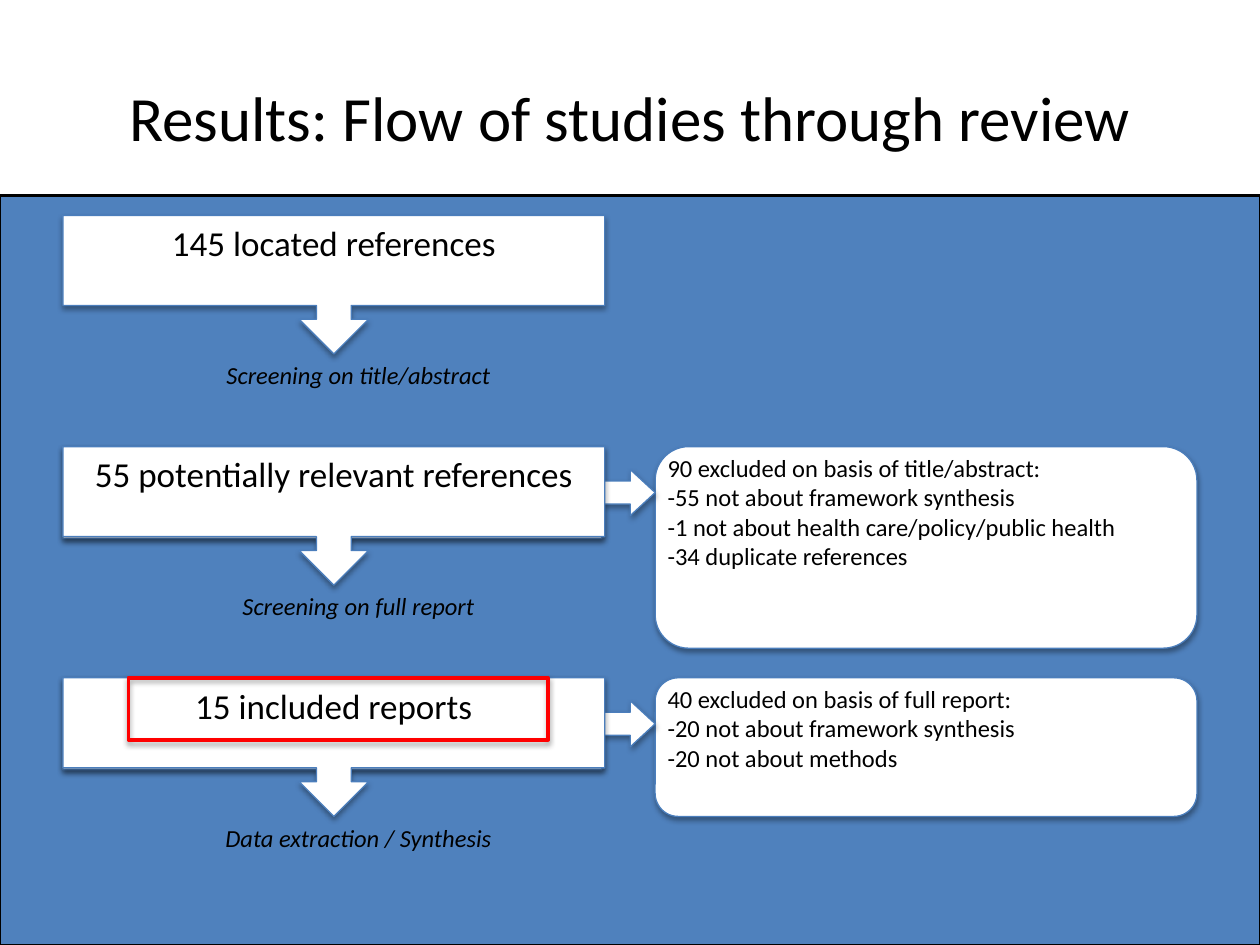
from lxml import etree
from pptx import Presentation
from pptx.dml.color import RGBColor
from pptx.enum.shapes import MSO_CONNECTOR, MSO_SHAPE
from pptx.enum.text import MSO_ANCHOR, PP_ALIGN
from pptx.oxml.ns import qn
from pptx.util import Inches, Pt

BLACK = RGBColor(0x00, 0x00, 0x00)
WHITE = RGBColor(0xFF, 0xFF, 0xFF)
BLUE = RGBColor(0x4F, 0x81, 0xBD)
OUTLINE_BLUE = RGBColor(0x4B, 0x7E, 0xBC)
RED = RGBColor(0xFF, 0x00, 0x00)
CENTER, LEFT = PP_ALIGN.CENTER, PP_ALIGN.LEFT
RECTANGLE = MSO_SHAPE.RECTANGLE
ROUNDED = MSO_SHAPE.ROUNDED_RECTANGLE
DOWN_CALLOUT = MSO_SHAPE.DOWN_ARROW_CALLOUT
RIGHT_CALLOUT = MSO_SHAPE.RIGHT_ARROW_CALLOUT
FONT = "Calibri"

presentation = Presentation()
presentation.slide_width = Inches(10)
presentation.slide_height = Inches(7.5)
slide = presentation.slides.add_slide(presentation.slide_layouts[5])


def add_box(kind, left, top, width, height, fill=WHITE, line=OUTLINE_BLUE,
            line_width=0.75, shadow=True):
    """Add a preset shape; fill=None leaves it hollow."""
    shape = slide.shapes.add_shape(
        kind, Inches(left), Inches(top), Inches(width), Inches(height))
    if fill is None:
        shape.fill.background()
    else:
        shape.fill.solid()
        shape.fill.fore_color.rgb = fill
    shape.line.color.rgb = line
    shape.line.width = Pt(line_width)
    shape.shadow.inherit = False
    if shadow:
        effects = shape._element.spPr.find(qn("a:effectLst"))
        outer = etree.SubElement(
            effects, qn("a:outerShdw"), blurRad=str(Pt(3.1)),
            dist=str(Pt(1.8)), dir="5400000", rotWithShape="0")
        color = etree.SubElement(outer, qn("a:srgbClr"), val=str(BLACK))
        etree.SubElement(color, qn("a:alpha"), val="35000")
    return shape


def add_text(lines, left, top, width, height, size=14, italic=False,
             alignment=CENTER):
    text_box = slide.shapes.add_textbox(
        Inches(left), Inches(top), Inches(width), Inches(height))
    frame = text_box.text_frame
    frame.word_wrap = True
    frame.text = "\n".join(lines)
    for paragraph in frame.paragraphs:
        paragraph.alignment = alignment
        paragraph.font.name = FONT
        paragraph.font.size = Pt(size)
        paragraph.font.italic = italic
        paragraph.font.color.rgb = BLACK


# Blue body with a rule under the title
add_box(RECTANGLE, 0, 1.55, 10, 5.95, fill=BLUE, line=BLACK, shadow=False)
rule = slide.shapes.add_connector(
    MSO_CONNECTOR.STRAIGHT, Inches(0), Inches(1.55), Inches(10), Inches(1.55))
rule.line.color.rgb = BLACK
rule.line.width = Pt(2)
etree.SubElement(rule._element.spPr, qn("a:effectLst"))

title = slide.shapes.title
title.left, title.top = Inches(0.5), Inches(0.3)
title.width, title.height = Inches(9), Inches(1.25)
title.text_frame.text = "Results: Flow of studies through review"
title.text_frame.vertical_anchor = MSO_ANCHOR.MIDDLE
title_paragraph = title.text_frame.paragraphs[0]
title_paragraph.alignment = CENTER
title_paragraph.font.name = FONT
title_paragraph.font.size = Pt(36)
title_paragraph.font.color.rgb = BLACK

# Each stage: references kept, next step, exclusions and their box height
STAGES = [
    ("145 located references", "Screening on title/abstract", [], 0),
    ("55 potentially relevant references", "Screening on full report",
     ["90 excluded on basis of title/abstract:",
      "-55 not about framework synthesis",
      "-1 not about health care/policy/public health",
      "-34 duplicate references"], 1.6),
    ("15 included reports", "Data extraction / Synthesis",
     ["40 excluded on basis of full report:",
      "-20 not about framework synthesis",
      "-20 not about methods"], 1.1),
]
FIRST_TOP, PITCH = 1.71, 1.835
STAGE_LEFT, STAGE_WIDTH, STAGE_HEIGHT = 0.5, 4.3, 1.1
BODY_HEIGHT = 0.73
EXCLUDED_LEFT = 5.2

for index, (kept, step, excluded, excluded_height) in enumerate(STAGES):
    top = FIRST_TOP + index * PITCH
    add_text([step], 0.89, top + STAGE_HEIGHT, 3.91, BODY_HEIGHT, italic=True)
    if excluded:
        excluded_area = (EXCLUDED_LEFT, top, STAGE_WIDTH, excluded_height)
        add_box(ROUNDED, *excluded_area)
        add_text(excluded, *excluded_area, alignment=LEFT)
        side_arrow = add_box(RIGHT_CALLOUT, STAGE_LEFT, top,
                             EXCLUDED_LEFT - STAGE_LEFT, BODY_HEIGHT)
        for position, value in enumerate((0.25, 0.25, 0.27, 0.91)):
            side_arrow.adjustments[position] = value
    add_box(DOWN_CALLOUT, STAGE_LEFT, top, STAGE_WIDTH, STAGE_HEIGHT)
    add_text([kept], STAGE_LEFT, top, STAGE_WIDTH, BODY_HEIGHT, size=20)

# Red frame around the included reports
add_box(RECTANGLE, 1.02, 5.38, 3.33, 0.49, fill=None, line=RED, line_width=2.25)

presentation.save("out.pptx")
